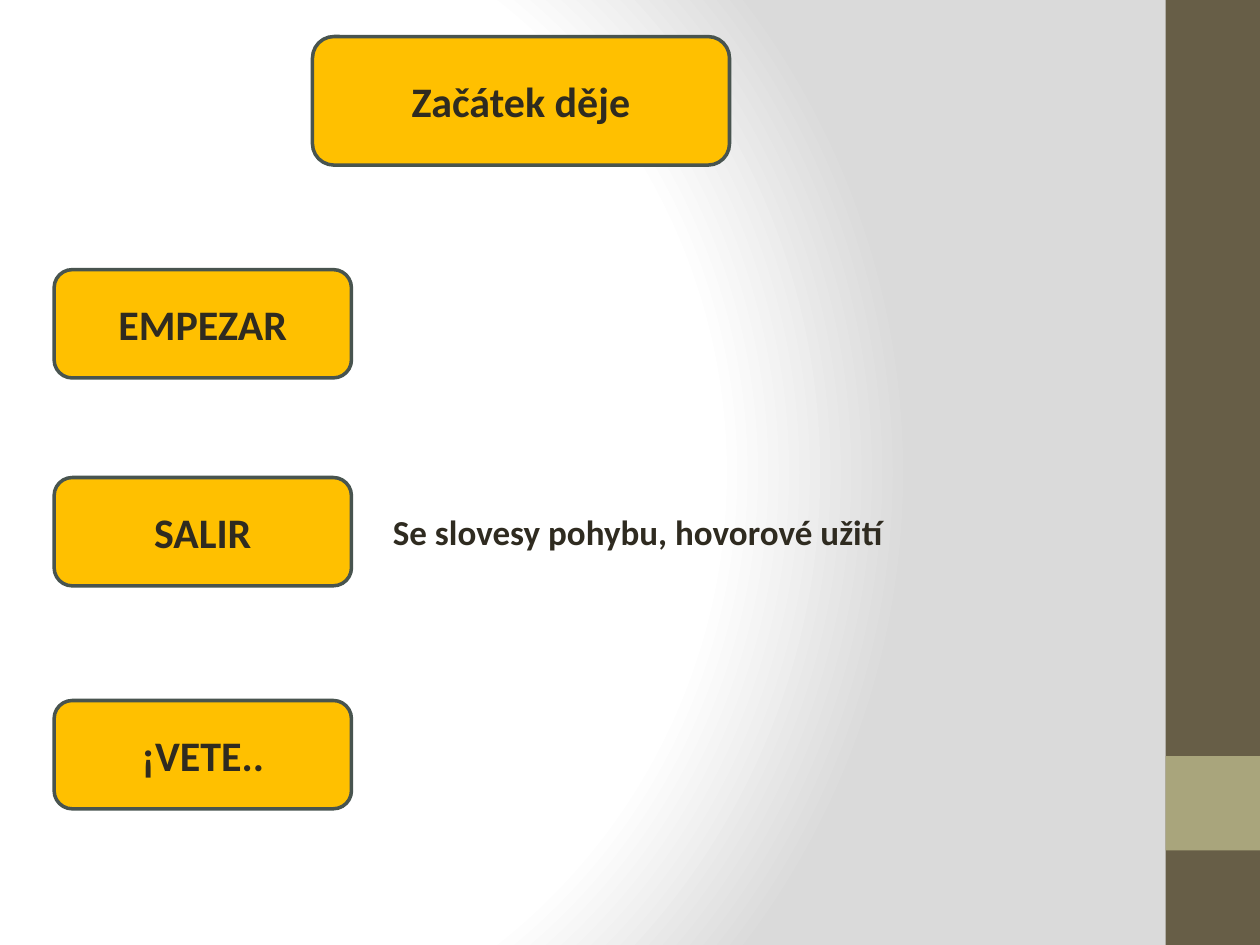
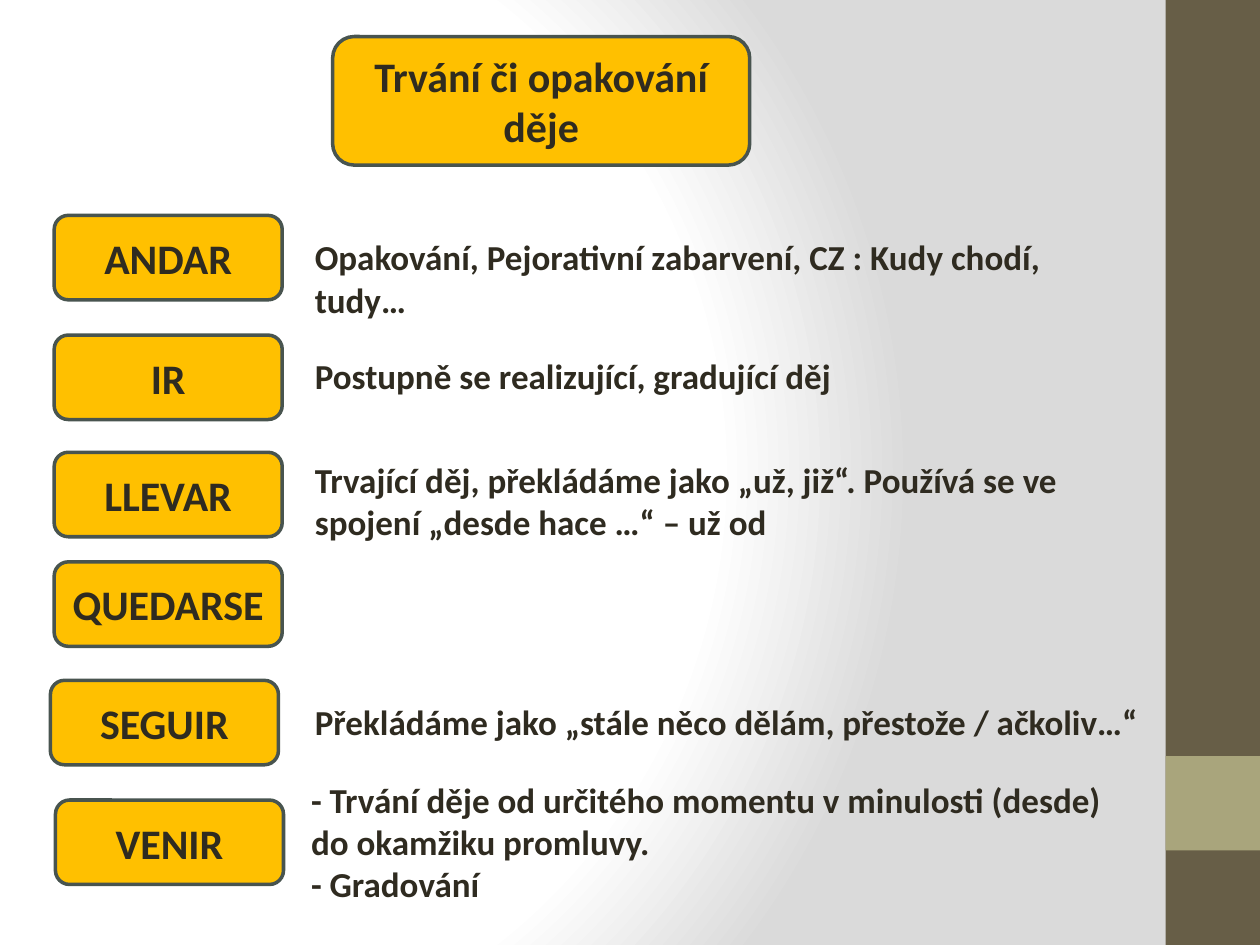
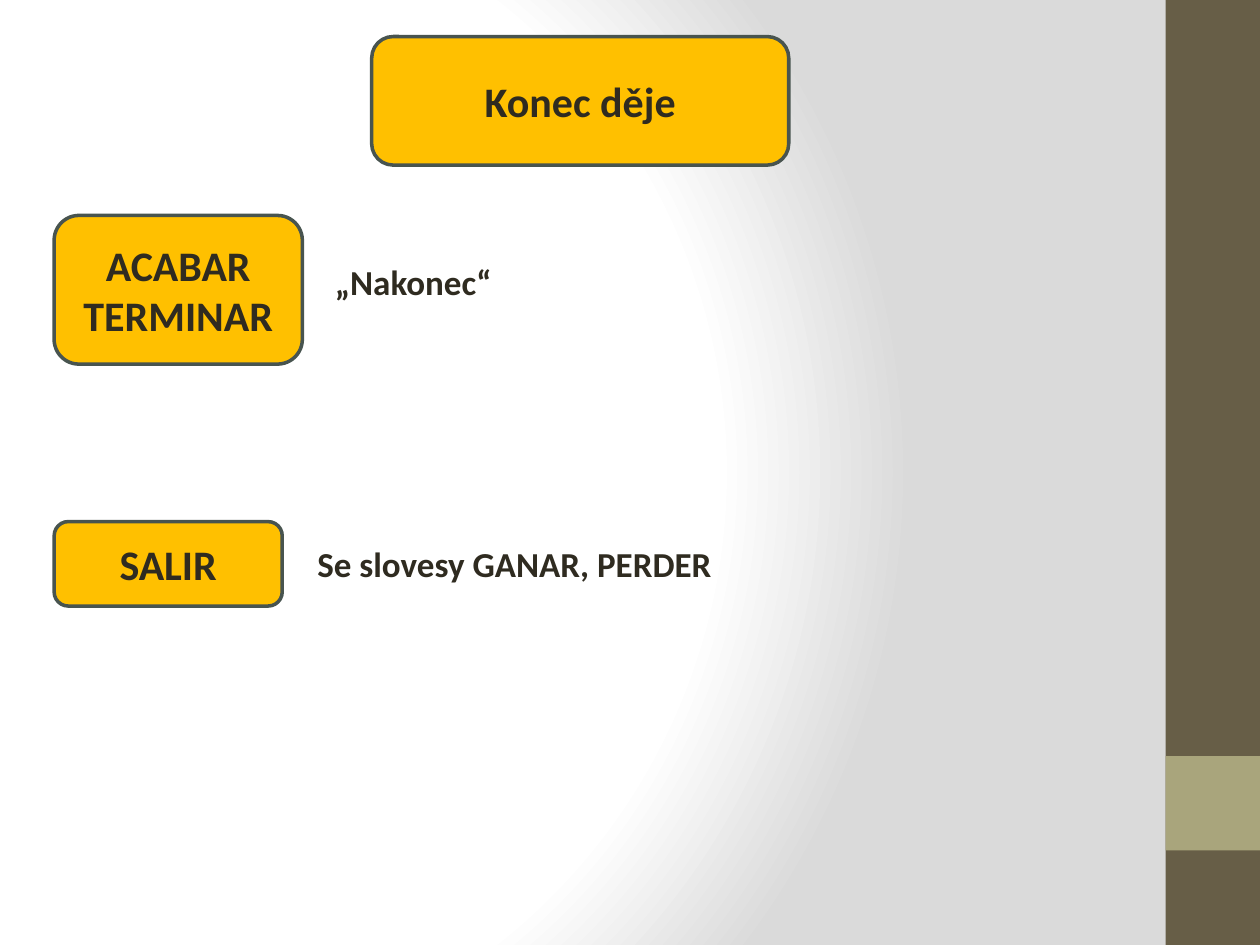
import pptx
import pptx.dml.color
import pptx.enum.shapes
import pptx.enum.text
import pptx.oxml
import pptx.util

COLUMNS, ROWS = 100, 75
TITLE_ONLY = 5
TAG_LEFT = 4.3
TITLE_TOP, TITLE_WIDTH, TITLE_HEIGHT = 2.9, 33.1, 10.2
LINE_ROWS, NOTE_PADDING = 3.33, 1.1
BACKGROUND_STOPS = [(0, "FFFFFF"), (75, "FFFFFF"), (100, "DADADA")]
NAMESPACE = "http://schemas.openxmlformats.org/drawingml/2006/main"


def colour(hex_text):
    return pptx.dml.color.RGBColor.from_string(hex_text)


class Deck:
    font = "Calibri"
    ink = "2F2B20"
    gold = "FFC000"
    outline = "48544F"
    band = "675E47"
    accent = "A9A57C"
    heading_size = 24
    note_size = 20

    def __init__(self):
        self.presentation = pptx.Presentation()
        self.presentation.slide_width = pptx.util.Inches(10)
        self.presentation.slide_height = pptx.util.Inches(7.5)
        self.master = self.presentation.slide_master
        self.slide = None

    def area(self, left, top, width, height):
        column = self.presentation.slide_width / COLUMNS
        row = self.presentation.slide_height / ROWS
        return (round(left * column), round(top * row),
                round(width * column), round(height * row))

    def start_slide(self):
        layout = self.presentation.slide_layouts[TITLE_ONLY]
        self.slide = self.presentation.slides.add_slide(layout)

    def background(self):
        fill = self.master.background.fill
        fill.solid()
        stops = "".join(
            f'<a:gs pos="{share * 1000}"><a:srgbClr val="{shade}"/></a:gs>'
            for share, shade in BACKGROUND_STOPS)
        gradient = pptx.oxml.parse_xml(
            f'<a:gradFill xmlns:a="{NAMESPACE}" rotWithShape="1">'
            f'<a:gsLst>{stops}</a:gsLst><a:path path="circle">'
            '<a:fillToRect l="20000" t="50000" r="100000" b="50000"/>'
            '</a:path></a:gradFill>')
        solid = self.master.element.find(f".//{{{NAMESPACE}}}solidFill")
        solid.getparent().replace(solid, gradient)

    def shape(self, kind, area, fill):
        block = self.slide.shapes.add_shape(kind, *self.area(*area))
        block.shadow.inherit = False
        block.fill.solid()
        block.fill.fore_color.rgb = colour(fill)
        block.line.fill.background()
        return block

    def master_band(self, area, fill, depth):
        band = self.shape(pptx.enum.shapes.MSO_SHAPE.RECTANGLE, area, fill)
        self.master.element.cSld.spTree.insert(2 + depth, band.element)

    def plate(self, area):
        plate = self.shape(pptx.enum.shapes.MSO_SHAPE.ROUNDED_RECTANGLE, area, self.gold)
        plate.line.color.rgb = colour(self.outline)
        plate.line.width = pptx.util.Pt(2)
        return plate

    def set_lines(self, frame, lines, size, align):
        for number, line in enumerate(lines):
            paragraph = frame.add_paragraph() if number else frame.paragraphs[0]
            paragraph.alignment = align
            run = paragraph.add_run()
            run.text = line
            run.font.name = self.font
            run.font.size = pptx.util.Pt(size)
            run.font.bold = True
            run.font.color.rgb = colour(self.ink)

    def set_centred(self, frame, text):
        frame.word_wrap = True
        frame.auto_size = pptx.enum.text.MSO_AUTO_SIZE.NONE
        frame.vertical_anchor = pptx.enum.text.MSO_ANCHOR.MIDDLE
        self.set_lines(frame, [text], self.heading_size, pptx.enum.text.PP_ALIGN.CENTER)

    def title(self, text, left):
        area = (left, TITLE_TOP, TITLE_WIDTH, TITLE_HEIGHT)
        plate = self.plate(area)
        heading = self.slide.shapes.title
        heading.left, heading.top, heading.width, heading.height = self.area(*area)
        plate.element.addnext(heading.element)
        self.set_centred(heading.text_frame, text)

    def verb(self, text, top, width=18.1, height=6.7, left=TAG_LEFT):
        self.set_centred(self.plate((left, top, width, height)).text_frame, text)
        return top + height / 2

    def note(self, lines, left, middle, width):
        height = NOTE_PADDING + LINE_ROWS * len(lines)
        area = self.area(left, middle - height / 2, width, height)
        frame = self.slide.shapes.add_textbox(*area).text_frame
        frame.word_wrap = False
        frame.auto_size = pptx.enum.text.MSO_AUTO_SIZE.SHAPE_TO_FIT_TEXT
        self.set_lines(frame, lines, self.note_size, pptx.enum.text.PP_ALIGN.LEFT)


def beginning(deck):
    deck.title("Začátek děje", 24.8)
    size = {"width": 23.6, "height": 8.6}
    deck.verb("EMPEZAR", 21.4, **size)
    salir = deck.verb("SALIR", 37.9, **size)
    deck.note(["Se slovesy pohybu, hovorové užití"], 30.2, salir, 41.3)
    deck.verb("¡VETE..", 55.6, **size)


def duration(deck):
    deck.title("Trvání či opakování děje", 26.4)
    andar = deck.verb("ANDAR", 17.1)
    ir = deck.verb("IR", 26.6)
    llevar = deck.verb("LLEVAR", 35.9)
    deck.verb("QUEDARSE", 44.6)
    seguir = deck.verb("SEGUIR", 54, left=4)
    venir = deck.verb("VENIR", 63.5, left=4.4)
    deck.note(["Opakování, Pejorativní zabarvení, CZ : Kudy chodí, tudy…"], 24, andar, 67.4)
    deck.note(["Postupně se realizující, gradující děj"], 24, ir - 0.1, 43.3)
    deck.note(["Trvající děj, překládáme jako „už, již“. Používá se ve",
               "spojení „desde hace …“ – už od"], 24, llevar + 0.5, 62.1)
    deck.note(["Překládáme jako „stále něco dělám, přestože / ačkoliv…“"], 24, seguir, 67.9)
    deck.note(["- Trvání děje od určitého momentu v minulosti (desde)",
               "do okamžiku promluvy.", "- Gradování"], 23.7, venir, 65.2)


def ending(deck):
    deck.title("Konec děje", 29.5)
    acabar = deck.verb("ACABAR TERMINAR", 17.1, width=19.7, height=11.8)
    salir = deck.verb("SALIR", 41.4)
    deck.note(["„Nakonec“"], 25.6, acabar - 0.6, 14.6)
    deck.note(["Se slovesy GANAR, PERDER"], 24.2, salir, 33.6)


def main():
    deck = Deck()
    deck.background()
    for number, content in enumerate([beginning, duration, ending]):
        deck.start_slide()
        if number == 0:
            deck.master_band((92.5, 0, 7.5, ROWS), deck.band, 0)
            deck.master_band((92.5, 60, 7.5, 7.5), deck.accent, 1)
        content(deck)
    deck.presentation.save("out.pptx")


if __name__ == "__main__":
    main()
